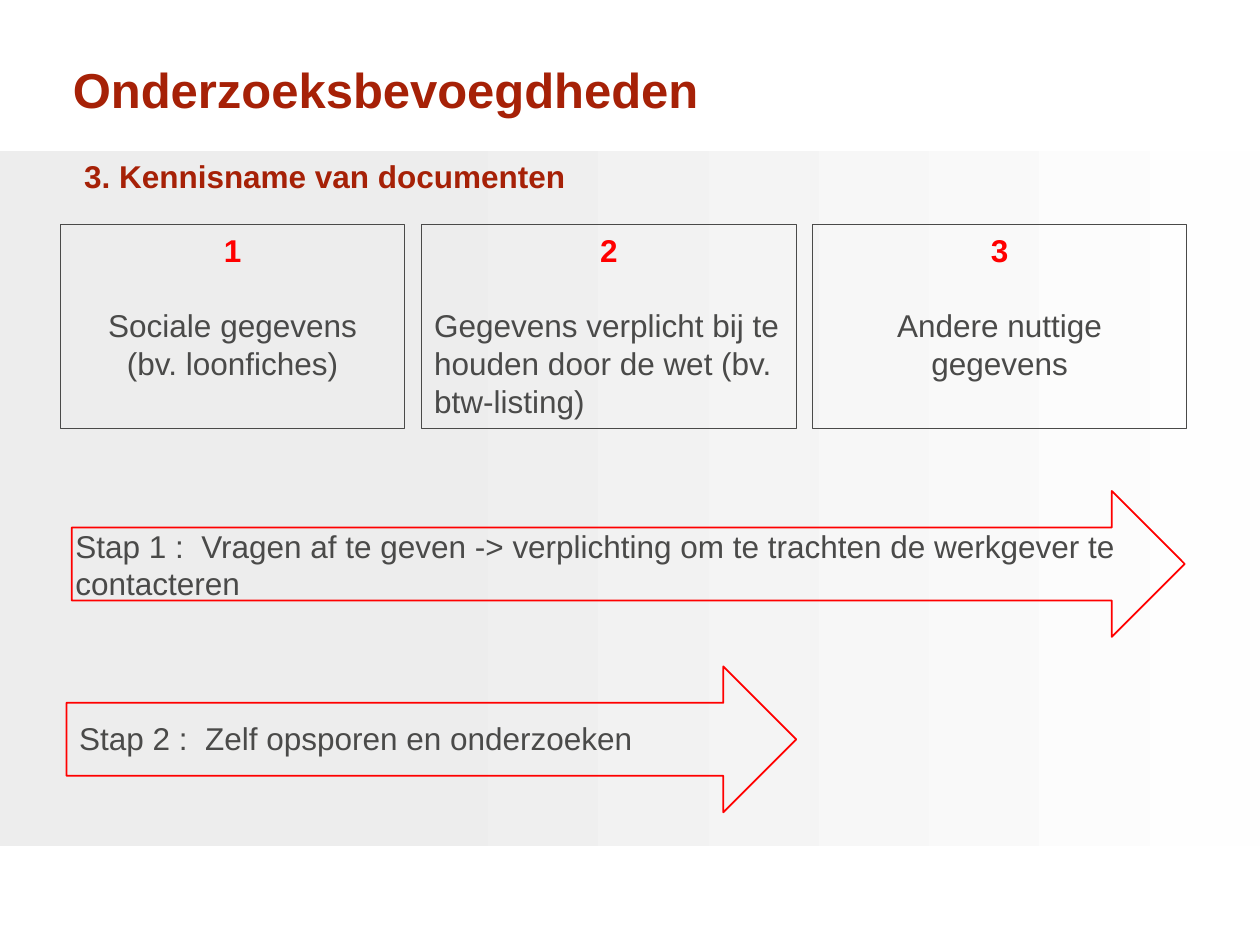
"""Build the slide on taking cognisance of documents in three boxes and two steps."""
from pptx import Presentation
from pptx.dml.color import RGBColor
from pptx.enum.shapes import MSO_SHAPE
from pptx.enum.text import MSO_ANCHOR, PP_ALIGN
from pptx.util import Pt

RED, BRICK, GREY = "FF0000", "A62107", "4A4A49"


def color(value):
    return RGBColor.from_string(value)


def write(frame, text, size=18, ink=GREY, bold=False, align=PP_ALIGN.LEFT,
          before=0, spacing=1.0, anchor=MSO_ANCHOR.TOP, wrap=True):
    frame.word_wrap = wrap
    frame.vertical_anchor = anchor
    paragraph = frame.paragraphs[0] if not frame.text else frame.add_paragraph()
    paragraph.text = text
    paragraph.alignment = align
    paragraph.line_spacing = spacing
    if before:
        paragraph.space_before = Pt(before)
    font = paragraph.font
    font.name, font.size, font.bold = "Arial", Pt(size), bold
    font.color.rgb = color(ink)


presentation = Presentation()
presentation.slide_width, presentation.slide_height = Pt(720), Pt(540)
slide = presentation.slides.add_slide(presentation.slide_layouts[6])
shapes = slide.shapes

band = shapes.add_shape(MSO_SHAPE.RECTANGLE, Pt(0), Pt(86.4), Pt(720), Pt(397))
band.shadow.inherit = False
band.line.fill.background()
band.fill.gradient()
band.fill.gradient_angle = 0
for stop, (position, tint) in zip(band.fill.gradient_stops, [(0.3, "EDEDED"), (1, "FEFEFE")]):
    stop.position = position
    stop.color.rgb = color(tint)

texts = [
    ("Onderzoeksbevoegdheden", (34.6, 30.2, 642, 45.4),
     dict(size=28, ink=BRICK, bold=True, spacing=0.9, anchor=MSO_ANCHOR.MIDDLE)),
    ("3. Kennisname van documenten", (41, 86.4, 292, 29),
     dict(ink=BRICK, bold=True, wrap=False)),
    ("Stap 1 :  Vragen af te geven -> verplichting om te trachten de werkgever te contacteren",
     (36, 297.4, 653, 51), {}),
    ("Stap 2 :  Zelf opsporen en onderzoeken", (38.2, 407.5, 449, 29), {}),
]
for text, bounds, style in texts:
    box = shapes.add_textbox(*map(Pt, bounds))
    write(box.text_frame, text, **style)

columns = [
    (34.6, 196.6, PP_ALIGN.CENTER, ["Sociale gegevens", "(bv. loonfiches)"]),
    (241, 214, PP_ALIGN.LEFT, ["Gegevens verplicht bij te houden door de wet (bv. btw-listing)"]),
    (464.2, 214, PP_ALIGN.CENTER, ["Andere nuttige gegevens"]),
]
outlines = []
for number, (left, width, align, lines) in enumerate(columns, 1):
    box = shapes.add_shape(MSO_SHAPE.RECTANGLE, Pt(left), Pt(128.2), Pt(width), Pt(116.6))
    outlines.append((box, GREY, 0.75))
    write(box.text_frame, str(number), ink=RED, bold=True, align=PP_ALIGN.CENTER)
    for index, line in enumerate(lines):
        write(box.text_frame, line, align=align, before=0 if index else 21.5)

for left, top, width in [(41, 280.6, 636), (38, 380.8, 417)]:
    arrow = shapes.add_shape(MSO_SHAPE.RIGHT_ARROW, Pt(left), Pt(top), Pt(width), Pt(83.4))
    outlines.append((arrow, RED, 1))

for shape, ink, weight in outlines:
    shape.shadow.inherit = False
    shape.fill.background()
    shape.line.color.rgb = color(ink)
    shape.line.width = Pt(weight)

presentation.save("out.pptx")
